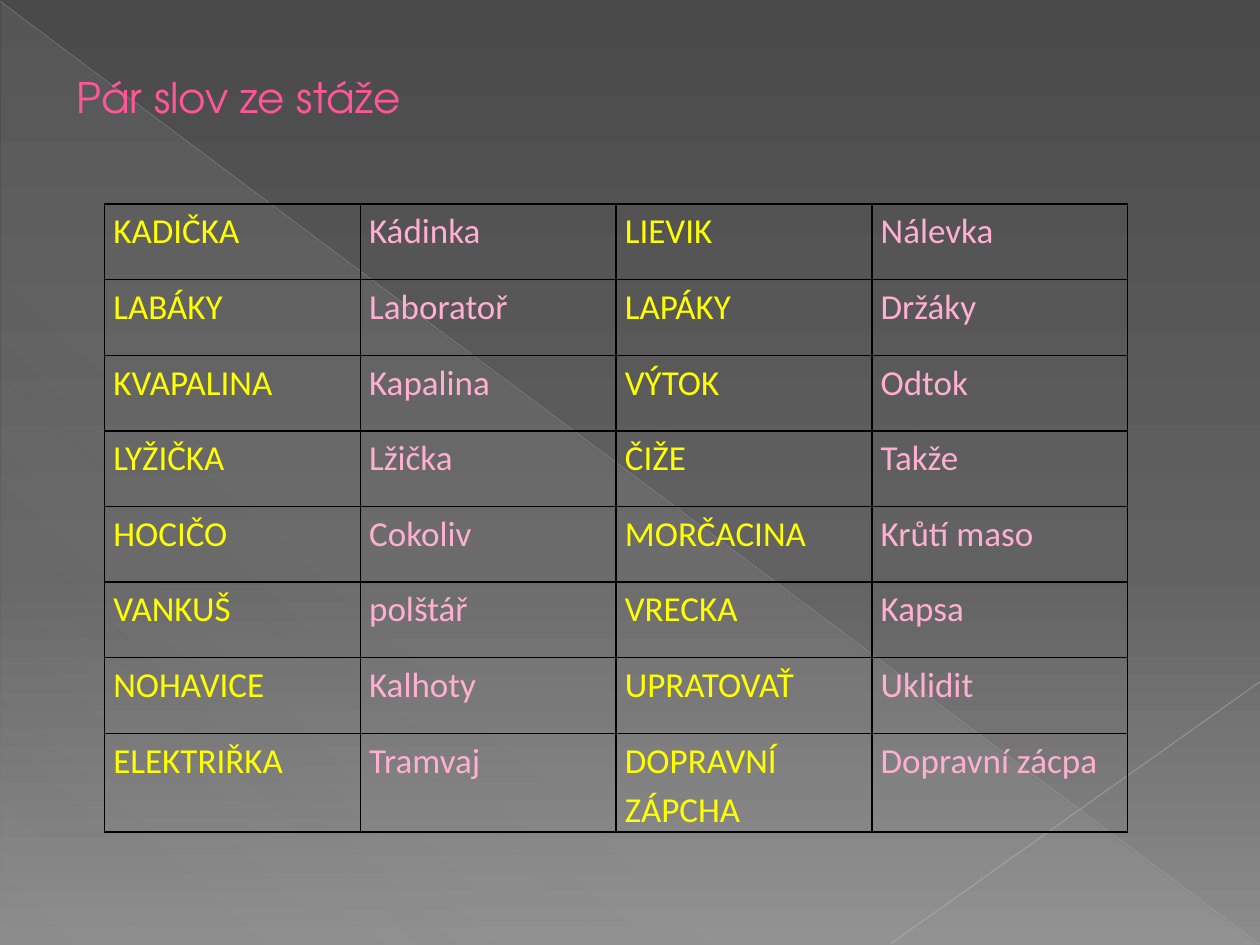
from pptx import Presentation
from pptx.dml.color import RGBColor as RGB
from pptx.enum.shapes import MSO_CONNECTOR as CONN, MSO_SHAPE as SHAPE
from pptx.enum.text import MSO_ANCHOR as ANCHOR, PP_ALIGN as ALIGN
from pptx.oxml.ns import qn
from pptx.util import Inches, Pt
from lxml.etree import SubElement

COLORS = {
    "top": "4A4A4A", "middle": "626262", "bottom": "8C8C8C",
    "sheen": "D2D2D2", "diagonal": "BFBFBF", "corner": "C6C6C6",
    "border": "000000", "slovak": "FFFF00", "czech": "FFAFD1", "title": "FF5698",
}
WORDS = [
    ("KADIČKA", "Kádinka", "LIEVIK", "Nálevka"),
    ("LABÁKY", "Laboratoř", "LAPÁKY", "Držáky"),
    ("KVAPALINA", "Kapalina", "VÝTOK", "Odtok"),
    ("LYŽIČKA", "Lžička", "ČIŽE", "Takže"),
    ("HOCIČO", "Cokoliv", "MORČACINA", "Krůtí maso"),
    ("VANKUŠ", "polštář", "VRECKA", "Kapsa"),
    ("NOHAVICE", "Kalhoty", "UPRATOVAŤ", "Uklidit"),
    ("ELEKTRIŘKA", "Tramvaj", "DOPRAVNÍ ZÁPCHA", "Dopravní zácpa"),
]


class Deck:
    """Holds the fonts and the current slide, and draws each kind of element."""

    title_font, body_font = "TeX Gyre Adventor", "Calibri"

    def __init__(self, prs):
        self.slide = prs.slides.add_slide(prs.slide_layouts[5])
        self.shapes = self.slide.shapes

    def set_alpha(self, color, opacity):
        SubElement(color, qn("a:alpha"), val=str(opacity * 1000))

    def gradient(self, fill, element, angle, stops):
        fill.gradient()
        fill.gradient_angle = 360 - angle
        gs_list = next(element.iter(qn("a:gsLst")))
        for gs in list(gs_list):
            gs_list.remove(gs)
        for pos, name, opacity in stops:
            gs = SubElement(gs_list, qn("a:gs"), pos=str(pos * 1000))
            color = SubElement(gs, qn("a:srgbClr"), val=COLORS[name])
            if opacity < 100:
                self.set_alpha(color, opacity)

    def background(self, stops):
        self.gradient(self.slide.background.fill, self.slide.element, 90, stops)

    def triangle(self, x, y, w, h, stops):
        sp = self.shapes.add_shape(SHAPE.RIGHT_TRIANGLE, Inches(x), Inches(y), Inches(w), Inches(h))
        sp.shadow.inherit = False
        sp.line.fill.background()
        self.gradient(sp.fill, sp.element, 133, stops)

    def line(self, x1, y1, x2, y2, name, width, opacity):
        ln = self.shapes.add_connector(CONN.STRAIGHT, Inches(x1), Inches(y1), Inches(x2), Inches(y2))
        ln.line.color.rgb = RGB.from_string(COLORS[name])
        ln.line.width = Pt(width)
        self.set_alpha(next(ln.element.iter(qn("a:srgbClr"))), opacity)
        SubElement(ln.element.spPr, qn("a:effectLst"))

    def font(self, p, name, size, color):
        for r in p.runs:
            r.font.name, r.font.size = name, Pt(size)
            r.font.color.rgb = RGB.from_string(COLORS[color])

    def borders(self, cell):
        tc_pr = cell._tc.get_or_add_tcPr()
        for side in ("a:lnL", "a:lnR", "a:lnT", "a:lnB"):
            ln = SubElement(tc_pr, qn(side), w=str(Pt(1)))
            SubElement(SubElement(ln, qn("a:solidFill")), qn("a:srgbClr"), val=COLORS["border"])

    def table(self, x, y, col_width, row_height, rows):
        n_rows, n_cols = len(rows), len(rows[0])
        table = self.shapes.add_table(n_rows, n_cols, Inches(x), Inches(y),
                                      Inches(col_width * n_cols), Inches(row_height * n_rows)).table
        table.first_row = table.horz_banding = False
        for i, row in enumerate(rows):
            for j, text in enumerate(row):
                cell = table.cell(i, j)
                self.borders(cell)
                cell.fill.background()
                cell.margin_left = cell.margin_right = Inches(0.07)
                cell.margin_top = cell.margin_bottom = 0
                p = cell.text_frame.paragraphs[0]
                p.text = text
                p.line_spacing = 1.15
                self.font(p, self.body_font, 20, "czech" if j % 2 else "slovak")

    def title(self, x, y, w, h, text):
        sp = self.shapes.title
        sp.left, sp.top, sp.width, sp.height = Inches(x), Inches(y), Inches(w), Inches(h)
        self.shapes.element.append(sp.element)
        tf = sp.text_frame
        tf.text = text
        tf.word_wrap = True
        tf.vertical_anchor = ANCHOR.MIDDLE
        p = tf.paragraphs[0]
        p.alignment = ALIGN.LEFT
        self.font(p, self.title_font, 24, "title")


def main():
    prs = Presentation()
    prs.slide_width, prs.slide_height = Inches(10), Inches(7.5)
    deck = Deck(prs)
    deck.background([(0, "top", 100), (60, "middle", 100), (100, "bottom", 100)])
    deck.triangle(0.01, 0.02, 9.98, 7.48, [(0, "sheen", 10), (70, "sheen", 8), (100, "sheen", 1)])
    deck.line(0, 0.01, 9.99, 7.49, "diagonal", 0.39, 35)
    deck.line(10, 5.41, 7.07, 7.49, "corner", 0.47, 45)
    deck.table(0.83, 1.62, 2.03, 0.6, WORDS)
    deck.title(0.51, 0.52, 4.49, 0.5, "Pár slov ze stáže")
    prs.save("out.pptx")


if __name__ == "__main__":
    main()
